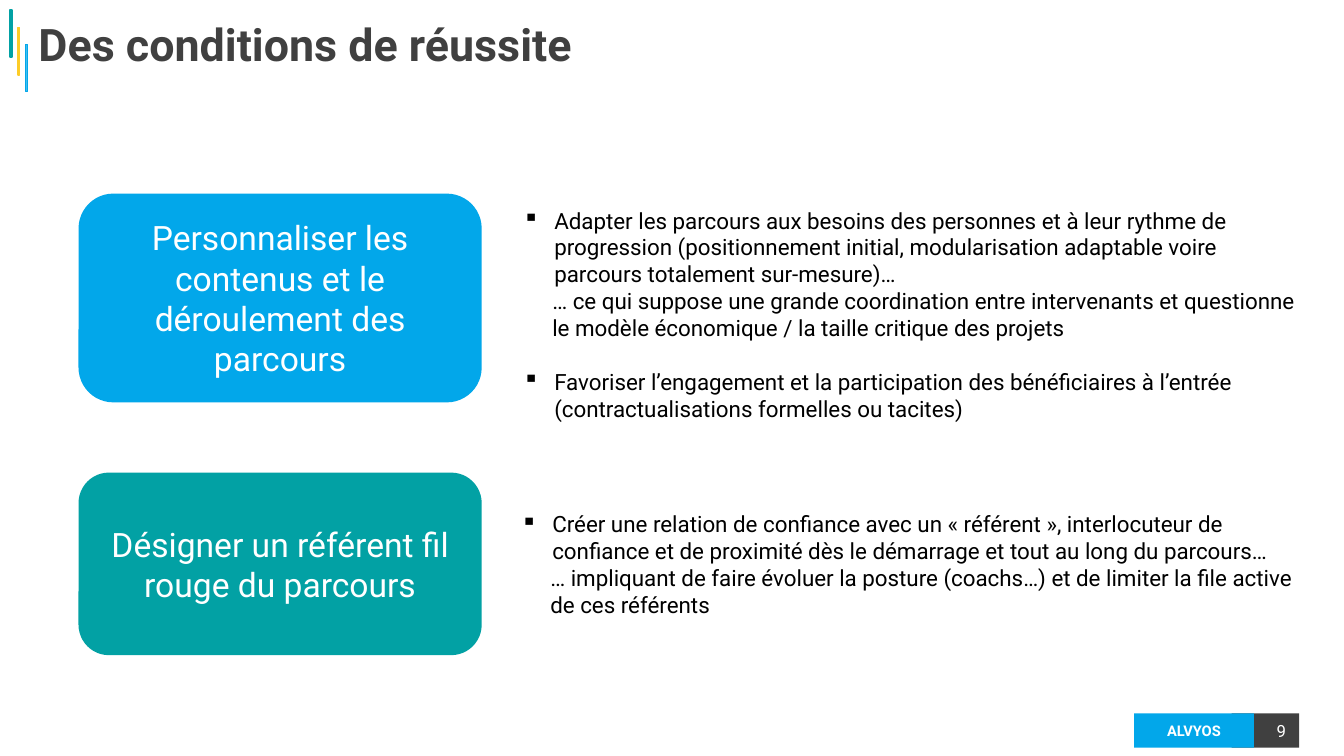
"""Builds the slide on the conditions for success."""
import pptx
import pptx.util
import pptx.dml.color
import pptx.enum.shapes
import pptx.enum.text
import pptx.oxml.ns
import lxml.etree

Cm = pptx.util.Cm
Pt = pptx.util.Pt
Kind = pptx.enum.shapes.MSO_SHAPE
Align = pptx.enum.text.PP_ALIGN
Anchor = pptx.enum.text.MSO_ANCHOR
qn = pptx.oxml.ns.qn

BLUE, TEAL, GOLD = "02A7EA", "02A1A4", "FDCC27"
DARK, WHITE, BLACK = "404040", "FFFFFF", "000000"
SLIM = (0.25, 0.13)
WIDE = (0.33, 0.18)


def color(code):
    return pptx.dml.color.RGBColor.from_string(code)


class Page:
    font = "Roboto"

    def __init__(self, deck):
        self.shapes = deck.slides.add_slide(deck.slide_layouts[6]).shapes

    def block(self, kind, at, fill):
        shape = self.shapes.add_shape(kind, *map(Cm, at))
        shape.shadow.inherit = False
        shape.fill.solid()
        shape.fill.fore_color.rgb = color(fill)
        shape.line.fill.background()
        return shape

    def bar(self, at, tint):
        shape = self.block(Kind.RECTANGLE, at, tint)
        shape.line.color.rgb = color(tint)
        shape.line.width = Pt(1)
        code = shape.element.spPr.find(qn("a:solidFill"))[0]
        lxml.etree.SubElement(code, qn("a:alpha"), val="75000")

    def frame(self, shape, anchor, inset=SLIM):
        frame = shape.text_frame
        frame.word_wrap = True
        frame.vertical_anchor = anchor
        frame.margin_left = frame.margin_right = Cm(inset[0])
        frame.margin_top = frame.margin_bottom = Cm(inset[1])
        return frame

    def put(self, para, text, size, tint, bold=False, align=Align.LEFT):
        para.alignment = align
        run = para.add_run()
        run.text = text
        run.font.name = self.font
        run.font.size = Pt(size)
        run.font.bold = bold
        run.font.color.rgb = color(tint)

    def label(self, kind, at, fill, text, size, bold=False,
              align=Align.CENTER, anchor=Anchor.MIDDLE, inset=SLIM):
        frame = self.frame(self.block(kind, at, fill), anchor, inset)
        self.put(frame.paragraphs[0], text, size, WHITE, bold, align)

    def title(self, at, text):
        box = self.shapes.add_textbox(*map(Cm, at))
        frame = self.frame(box, Anchor.MIDDLE, WIDE)
        self.put(frame.paragraphs[0], text, 32, DARK, True)

    def points(self, at, items):
        box = self.shapes.add_textbox(*map(Cm, at))
        frame = self.frame(box, Anchor.TOP)
        for pos, (mark, gap, text) in enumerate(items):
            para = frame.add_paragraph() if pos else frame.paragraphs[0]
            self.put(para, text, 16, BLACK)
            para.space_before = Pt(gap)
            props = para._p.get_or_add_pPr()
            props.set("marL", str(Cm(0.79 if mark else 0.74)))
            props.set("indent", str(Cm(-0.79 if mark else 0)))
            if mark:
                lxml.etree.SubElement(props, qn("a:buChar"), char="▪")


def main():
    deck = pptx.Presentation()
    deck.slide_width, deck.slide_height = Cm(33.87), Cm(19.05)
    page = Page(deck)

    page.label(Kind.RECTANGLE, (31.04, 17.98, 1.7, 0.86), DARK, "9", 12,
               align=Align.RIGHT, anchor=Anchor.TOP, inset=WIDE)
    page.label(Kind.RECTANGLE, (28.58, 17.98, 3.02, 0.86), BLUE, "ALVYOS",
               10.5, bold=True, inset=WIDE)
    for pos, (top, tint) in enumerate([(0.25, TEAL), (0.7, GOLD), (1.12, BLUE)]):
        page.bar((0.25 + 0.2 * pos, top, 0.05, 1.19), tint)
    page.title((0.64, 0.33, 32.89, 1.52), "Des conditions de réussite")

    for top, high, fill, text in [
        (4.88, 5.26, BLUE,
         "Personnaliser les contenus et le déroulement des parcours"),
        (11.91, 4.6, TEAL, "Désigner un référent fil rouge du parcours"),
    ]:
        page.label(Kind.ROUNDED_RECTANGLE, (1.98, top, 10.16, high), fill, text, 24)

    page.points((12.93, 5.08, 20.19, 5.74), [
        (True, 0, "Adapter les parcours aux besoins des personnes et à leur "
         "rythme de progression (positionnement initial, modularisation "
         "adaptable voire parcours totalement sur-mesure)…"),
        (False, 0, "… ce qui suppose une grande coordination entre intervenants "
         "et questionne le modèle économique / la taille critique des projets"),
        (True, 19.3, "Favoriser l’engagement et la participation des "
         "bénéficiaires à l’entrée (contractualisations formelles ou tacites)"),
    ])
    page.points((12.88, 12.73, 20.19, 3), [
        (True, 0, "Créer une relation de confiance avec un « référent », "
         "interlocuteur de confiance et de proximité dès le démarrage et tout "
         "au long du parcours…"),
        (False, 0, "… impliquant de faire évoluer la posture (coachs…) et de "
         "limiter la file active de ces référents"),
    ])
    deck.save("out.pptx")


if __name__ == "__main__":
    main()
